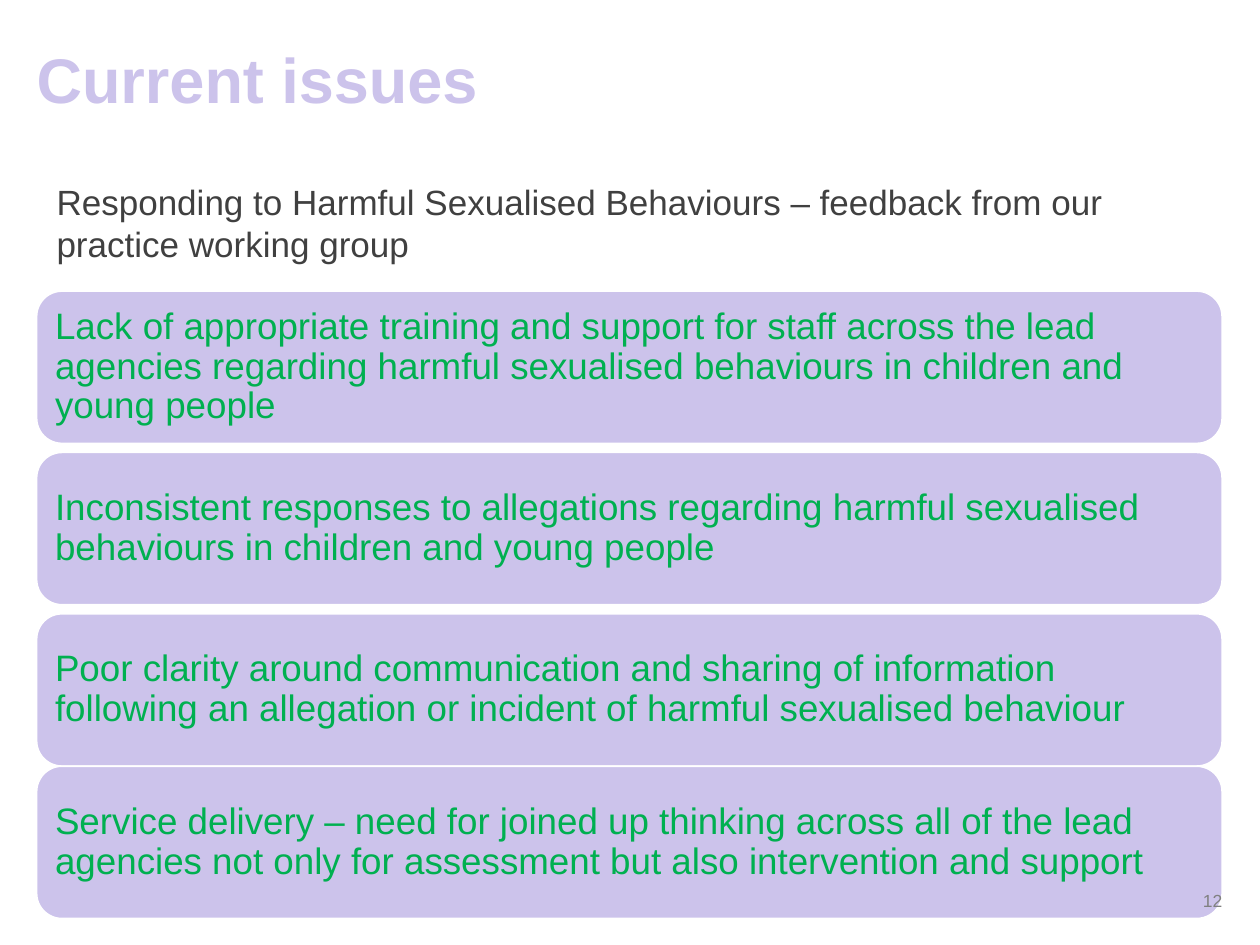
from pptx import Presentation
from pptx.dml.color import RGBColor
from pptx.enum.shapes import MSO_SHAPE
from pptx.enum.text import MSO_ANCHOR, PP_ALIGN
from pptx.util import Pt

LILAC = "CCC3EB"
LEFT, WIDTH = 20.9, 677.5
ISSUE_HEIGHT = 87.1
ISSUES = [
    (166.3, "Lack of appropriate training and support for staff across the lead "
            "agencies regarding harmful sexualised behaviours in children and young people"),
    (258.5, "Inconsistent responses to allegations regarding harmful sexualised "
            "behaviours in children and young people"),
    (350.7, "Poor clarity around communication and sharing of information "
            "following an allegation or incident of harmful sexualised behaviour"),
    (437.8, "Service delivery – need for joined up thinking across all of the lead "
            "agencies not only for assessment but also intervention and support"),
]


def rgb(value):
    return RGBColor.from_string(value)


def write(sp, text, size, color, bold=False, align=PP_ALIGN.LEFT,
          anchor=MSO_ANCHOR.MIDDLE, inset=(0, 0), spacing=None):
    tf = sp.text_frame
    tf.word_wrap = True
    tf.vertical_anchor = anchor
    tf.margin_left = tf.margin_right = Pt(inset[0])
    tf.margin_top = tf.margin_bottom = Pt(inset[1])
    p = tf.paragraphs[0]
    p.text = text
    p.alignment = align
    p.line_spacing = spacing
    font = p.font
    font.name = "Arial"
    font.size = Pt(size)
    font.bold = bold
    font.color.rgb = rgb(color)


def add_title(s, text):
    sp = s.shapes.title
    sp.left, sp.top, sp.width, sp.height = Pt(LEFT), Pt(18), Pt(WIDTH), Pt(59)
    write(sp, text, 36, LILAC, bold=True, spacing=0.9)


def add_text(s, left, top, width, height, text, size, color, **style):
    sp = s.shapes.add_textbox(Pt(left), Pt(top), Pt(width), Pt(height))
    write(sp, text, size, color, **style)


def add_issue(s, top, text):
    sp = s.shapes.add_shape(MSO_SHAPE.ROUNDED_RECTANGLE, Pt(LEFT), Pt(top),
                            Pt(WIDTH), Pt(ISSUE_HEIGHT))
    sp.shadow.inherit = False
    sp.fill.solid()
    sp.fill.fore_color.rgb = rgb(LILAC)
    sp.line.color.rgb = rgb("FFFFFF")
    sp.line.width = Pt(1)
    write(sp, text, 21, "00B050", inset=(6.3, 6.3), spacing=0.9)


def main():
    prs = Presentation()
    prs.slide_width, prs.slide_height = Pt(720), Pt(540)
    s = prs.slides.add_slide(prs.slide_layouts[5])
    add_title(s, "Current issues")
    for top, text in ISSUES:
        add_issue(s, top, text)
    add_text(s, 617.8, 500.4, 80.6, 28.8, "12", 10, "808080", align=PP_ALIGN.RIGHT)
    add_text(s, 25.2, 99.4, 669, 55.4,
             "Responding to Harmful Sexualised Behaviours – feedback from our "
             "practice working group",
             20, "404040", anchor=MSO_ANCHOR.TOP, inset=(7.2, 3.6))
    prs.save("out.pptx")


if __name__ == "__main__":
    main()
